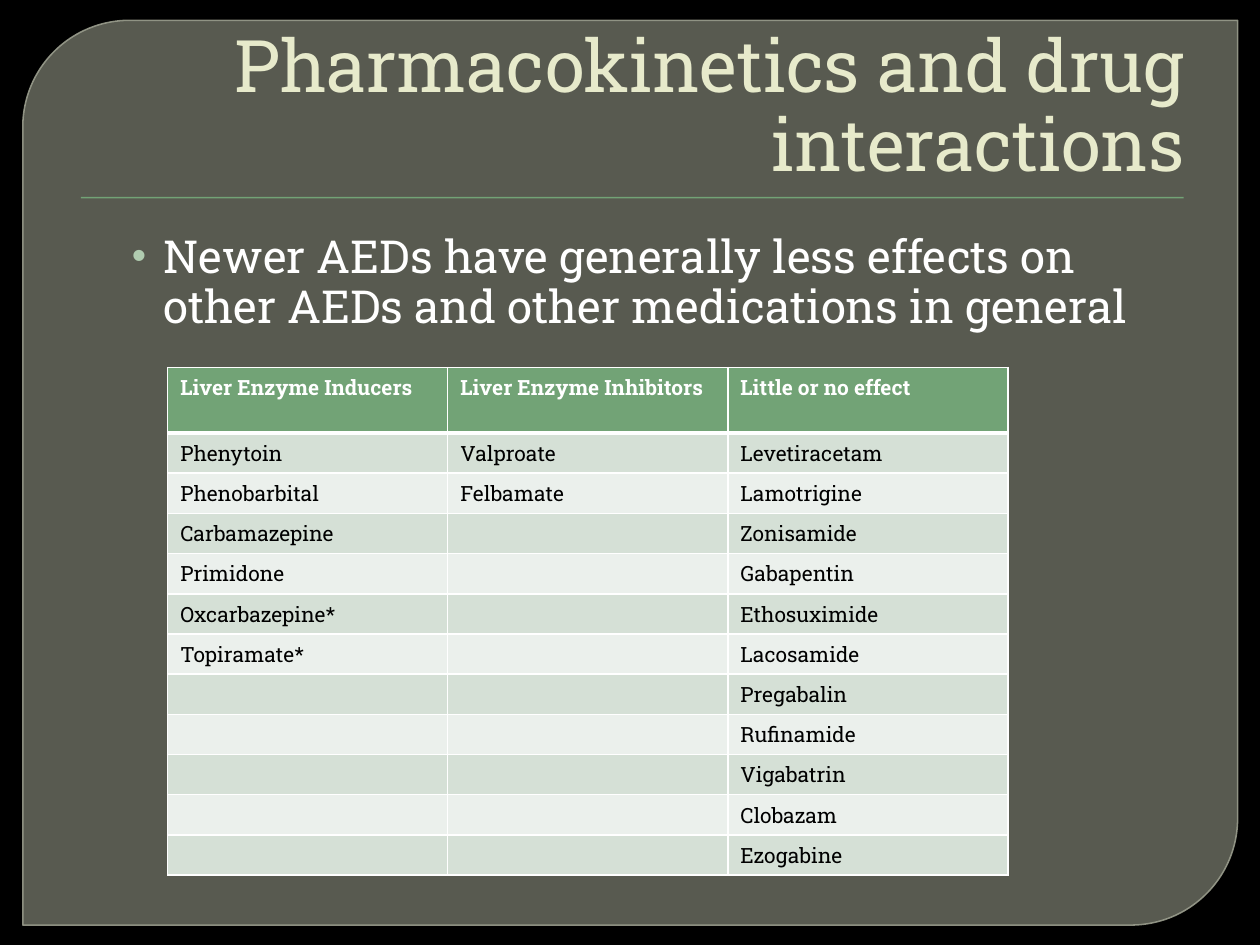
from itertools import zip_longest

from lxml.etree import SubElement
from pptx import Presentation
from pptx.dml.color import RGBColor
from pptx.enum.shapes import MSO_SHAPE
from pptx.enum.text import MSO_ANCHOR, PP_ALIGN
from pptx.oxml.ns import qn
from pptx.util import Cm, Pt

BLACK = RGBColor(0x00, 0x00, 0x00)
WHITE = RGBColor(0xFF, 0xFF, 0xFF)
PANEL = RGBColor(0x88, 0x8B, 0x7B)
PANEL_EDGE = RGBColor(0x9D, 0xA0, 0x90)
GREEN = RGBColor(0x72, 0xA3, 0x76)
CREAM = RGBColor(0xE7, 0xEA, 0xCB)
BULLET = RGBColor(0xB0, 0xCC, 0xB0)
BANDS = (RGBColor(0xEB, 0xF0, 0xEC), RGBColor(0xD5, 0xE0, 0xD6))
FONT = "Roboto Slab"

DRUGS = {
    "Liver Enzyme Inducers": [
        "Phenytoin", "Phenobarbital", "Carbamazepine", "Primidone",
        "Oxcarbazepine*", "Topiramate*"],
    "Liver Enzyme Inhibitors": ["Valproate", "Felbamate"],
    "Little or no effect": [
        "Levetiracetam", "Lamotrigine", "Zonisamide", "Gabapentin",
        "Ethosuximide", "Lacosamide", "Pregabalin", "Rufinamide",
        "Vigabatrin", "Clobazam", "Ezogabine"],
}


def style(paragraph, size, color, bold=False):
    font = paragraph.font
    font.name, font.size, font.bold = FONT, Pt(size), bold
    font.color.rgb = color


def set_alpha(fill_parent, percent):
    color = fill_parent.find(qn("a:solidFill"))[0]
    SubElement(color, qn("a:alpha"), val=str(percent * 1000))


def add_backdrop(slide, left, top, width, height):
    """Rounded panel with the thin rule under the title."""
    panel = slide.shapes.add_shape(
        MSO_SHAPE.ROUND_2_DIAG_RECTANGLE, left, top, width, height)
    panel.adjustments[0], panel.adjustments[1] = 0.118, 0
    panel.fill.solid()
    panel.fill.fore_color.rgb = PANEL
    panel.line.color.rgb = PANEL_EDGE
    panel.line.width = Pt(0.87)
    properties = panel.fill._xPr
    set_alpha(properties, 65)
    set_alpha(properties.find(qn("a:ln")), 88)

    rule = slide.shapes.add_shape(
        MSO_SHAPE.RECTANGLE, left + Cm(1.17), top + Cm(3.56),
        width - Cm(2.26), Cm(0.03))
    rule.fill.solid()
    rule.fill.fore_color.rgb = GREEN
    rule.line.fill.background()
    for shape in (panel, rule):
        shape.shadow.inherit = False


def add_text(slide, text, size, color, left, top, width, height):
    frame = slide.shapes.add_textbox(left, top, width, height).text_frame
    frame.word_wrap = True
    paragraph = frame.paragraphs[0]
    paragraph.text = text
    style(paragraph, size, color)
    return frame, paragraph


def add_title(slide, text, *box):
    frame, heading = add_text(slide, text, 41.4, CREAM, *box)
    frame.vertical_anchor = MSO_ANCHOR.BOTTOM
    heading.alignment = PP_ALIGN.RIGHT
    heading.line_spacing = 0.9


def add_bullet(slide, text, *box):
    _, point = add_text(slide, text, 26, WHITE, *box)
    point.space_before = Pt(4)
    point.line_spacing = 0.92
    # Hanging bullet: its elements stand before the default run properties
    properties = point._p.get_or_add_pPr()
    properties.set("marL", str(Cm(1.78)))
    properties.set("indent", str(-Cm(0.64)))
    defaults = properties.find(qn("a:defRPr"))
    color = SubElement(properties, qn("a:buClr"))
    SubElement(color, qn("a:srgbClr"), val=str(BULLET))
    SubElement(properties, qn("a:buSzPct"), val="90000")
    SubElement(properties, qn("a:buFont"), typeface="Arial")
    SubElement(properties, qn("a:buChar"), char="•")
    properties.append(defaults)


def set_borders(cell, top, bottom):
    properties = cell._tc.get_or_add_tcPr()
    for side, points in (("L", 1), ("R", 1), ("T", top), ("B", bottom)):
        line = SubElement(properties, qn(f"a:ln{side}"), w=str(Pt(points)))
        fill = SubElement(line, qn("a:solidFill"))
        SubElement(fill, qn("a:srgbClr"), val=str(WHITE))


def add_drug_table(slide, left, top, width, header_height, row_height):
    rows = [tuple(DRUGS), *zip_longest(*DRUGS.values(), fillvalue="")]
    height = header_height + row_height * (len(rows) - 1)
    table = slide.shapes.add_table(
        len(rows), len(DRUGS), left, top, width, height).table
    for r, names in enumerate(rows):
        header = r == 0
        table.rows[r].height = header_height if header else row_height
        for c, name in enumerate(names):
            cell = table.cell(r, c)
            set_borders(cell, 3 if r == 1 else 1, 3 if header else 1)
            cell.fill.solid()
            cell.fill.fore_color.rgb = GREEN if header else BANDS[r % 2]
            entry = cell.text_frame.paragraphs[0]
            entry.text = name
            style(entry, 12, WHITE if header else BLACK, header)
            # Keeps empty cells from growing their row
            entry._p.get_or_add_endParaRPr().set("sz", "1200")


def main():
    deck = Presentation()
    deck.slide_width, deck.slide_height = Cm(25.4), Cm(19.05)
    slide = deck.slides.add_slide(deck.slide_layouts[6])
    slide.background.fill.solid()
    slide.background.fill.fore_color.rgb = BLACK

    add_backdrop(slide, Cm(0.46), Cm(0.41), Cm(24.49), Cm(18.24))
    add_title(slide, "Pharmacokinetics and drug interactions",
              Cm(1.27), Cm(0.71), Cm(22.86), Cm(3.18))
    add_bullet(slide, "Newer AEDs have generally less effects on other AEDs "
               "and other medications in general",
               Cm(1.27), Cm(4.57), Cm(22.86), Cm(12.57))
    add_drug_table(slide, Cm(3.38), Cm(7.41), Cm(16.94), Cm(1.32), Cm(0.81))
    deck.save("out.pptx")


if __name__ == "__main__":
    main()
